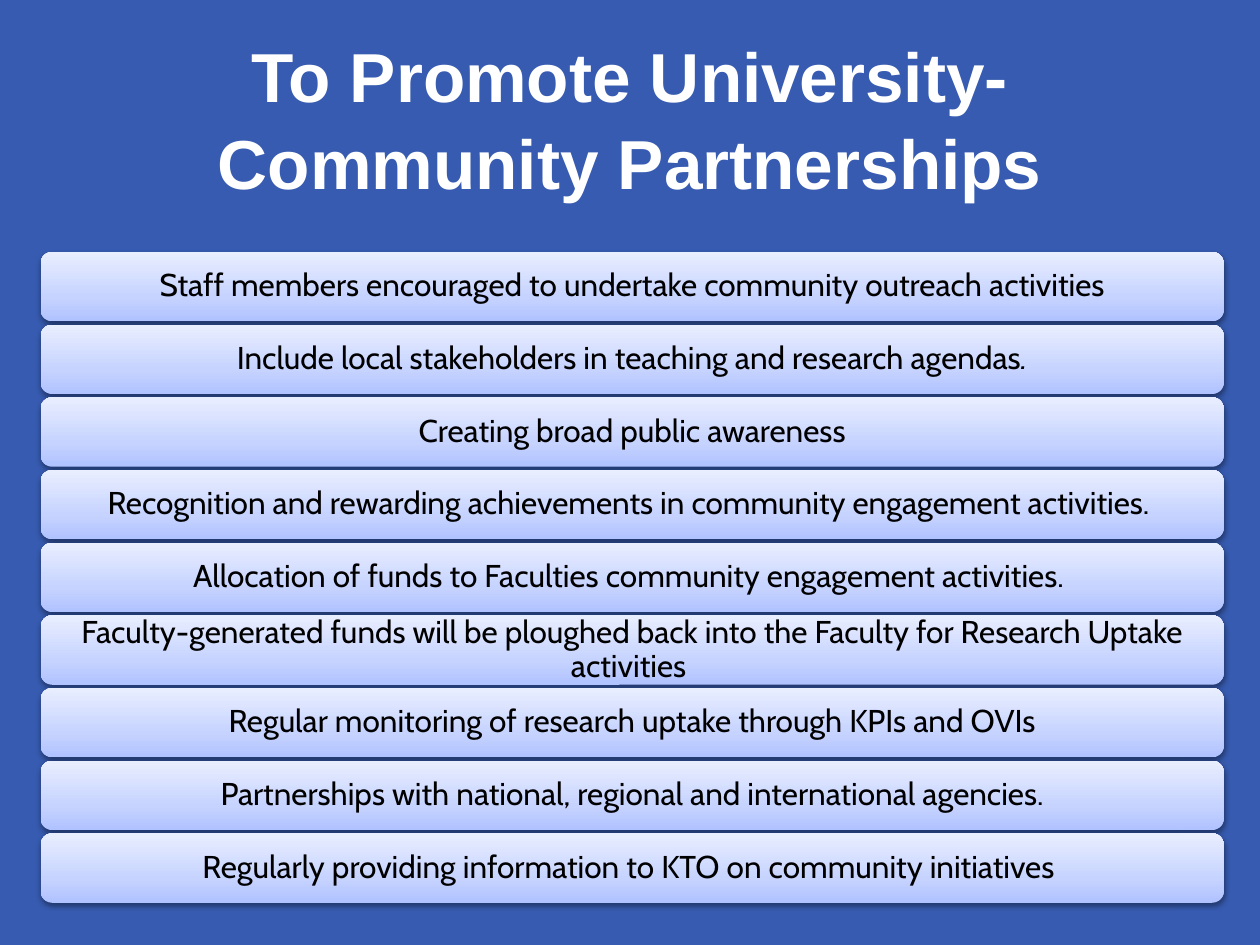
from copy import deepcopy

from lxml import etree
from pptx import Presentation
from pptx import util as u
from pptx.dml.color import RGBColor
from pptx.enum import shapes, text
from pptx.oxml import ns

COLORS = {
    "background": "375BB0",
    "title": "FFFFFF",
    "bar_text": "000000",
    "shadow": "000000",
    "bar_bottom": "B0C2FF",
    "bar_middle": "C6D3FF",
    "bar_top": "E9EEFF",
}
BAR_STOPS = [(0, "bar_bottom"), (0.35, "bar_middle"), (1, "bar_top")]

TITLE = "To Promote University-Community Partnerships"
# Each action is a list of (words, italic) runs.
ACTIONS = [
    [("Staff members encouraged to undertake community outreach activities", False)],
    [("Include local stakeholders in teaching and research agendas", False), (".", True)],
    [("Creating broad public awareness", False)],
    [("Recognition and rewarding achievements in community engagement activities. ", False)],
    [("Allocation of funds to Faculties community engagement activities. ", False)],
    [("Faculty-generated funds will be ploughed back into the Faculty "
      "for Research Uptake activities ", False)],
    [("Regular monitoring of research uptake through KPIs and OVIs", False)],
    [("Partnerships with national, regional and international agencies.", False)],
    [("Regularly providing information to KTO on community initiatives ", False)],
]

BAR_LEFT, BAR_TOP = 0.82, 5.08
BAR_WIDTH, BAR_HEIGHT = 23.85, 1.4
BAR_PITCH = 1.465


def color(name):
    return RGBColor.from_string(COLORS[name])


def add_run(para, words, font, size, color_name, bold=False, italic=False):
    span = para.add_run()
    span.text = words
    span.font.name = font
    span.font.size = u.Pt(size)
    span.font.bold = bold
    span.font.italic = italic
    span.font.color.rgb = color(color_name)


def centred_paragraph(box, line_spacing):
    frame = box.text_frame
    frame.word_wrap = True
    frame.vertical_anchor = text.MSO_ANCHOR.MIDDLE
    para = frame.paragraphs[0]
    para.alignment = text.PP_ALIGN.CENTER
    para.line_spacing = line_spacing
    return para


def add_title(page):
    box = page.shapes.add_textbox(u.Cm(1.27), u.Cm(0.76), u.Cm(22.86), u.Cm(3.18))
    para = centred_paragraph(box, 1.04)
    add_run(para, TITLE, "Arial", 39.6, "title", bold=True)


def fill_gradient(shape):
    """Fill from bottom to top with the three bar colours."""
    shape.fill.gradient()
    shape.fill.gradient_angle = 90
    stop_list = shape._element.spPr.find(f".//{ns.qn('a:gsLst')}")
    stop_list.append(deepcopy(stop_list[-1]))
    for stop, (position, name) in zip(shape.fill.gradient_stops, BAR_STOPS):
        stop.position = position
        stop.color.rgb = color(name)


def add_soft_shadow(shape):
    shape.shadow.inherit = False
    effects = shape._element.spPr.find(ns.qn("a:effectLst"))
    shadow = etree.SubElement(
        effects, ns.qn("a:outerShdw"), blurRad=str(u.Pt(3.1)), dist=str(u.Pt(1.6)),
        dir="5400000", rotWithShape="0")
    tint = etree.SubElement(shadow, ns.qn("a:srgbClr"), val=COLORS["shadow"])
    etree.SubElement(tint, ns.qn("a:alpha"), val="38000")


def add_bar(page, top, runs):
    bar = page.shapes.add_shape(
        shapes.MSO_SHAPE.ROUNDED_RECTANGLE,
        u.Cm(BAR_LEFT), u.Cm(top), u.Cm(BAR_WIDTH), u.Cm(BAR_HEIGHT))
    fill_gradient(bar)
    bar.line.fill.background()
    add_soft_shadow(bar)
    frame = bar.text_frame
    frame.margin_left = frame.margin_right = u.Cm(0.25)
    frame.margin_top = frame.margin_bottom = u.Cm(0.17)
    para = centred_paragraph(bar, 0.9)
    for words, italic in runs:
        add_run(para, words, "Cabin", 18, "bar_text", italic=italic)


def main():
    deck = Presentation()
    deck.slide_width, deck.slide_height = u.Cm(25.4), u.Cm(19.05)
    page = deck.slides.add_slide(deck.slide_layouts[6])
    page.background.fill.solid()
    page.background.fill.fore_color.rgb = color("background")
    add_title(page)
    for row, runs in enumerate(ACTIONS):
        add_bar(page, BAR_TOP + row * BAR_PITCH, runs)
    deck.save("out.pptx")


if __name__ == "__main__":
    main()
